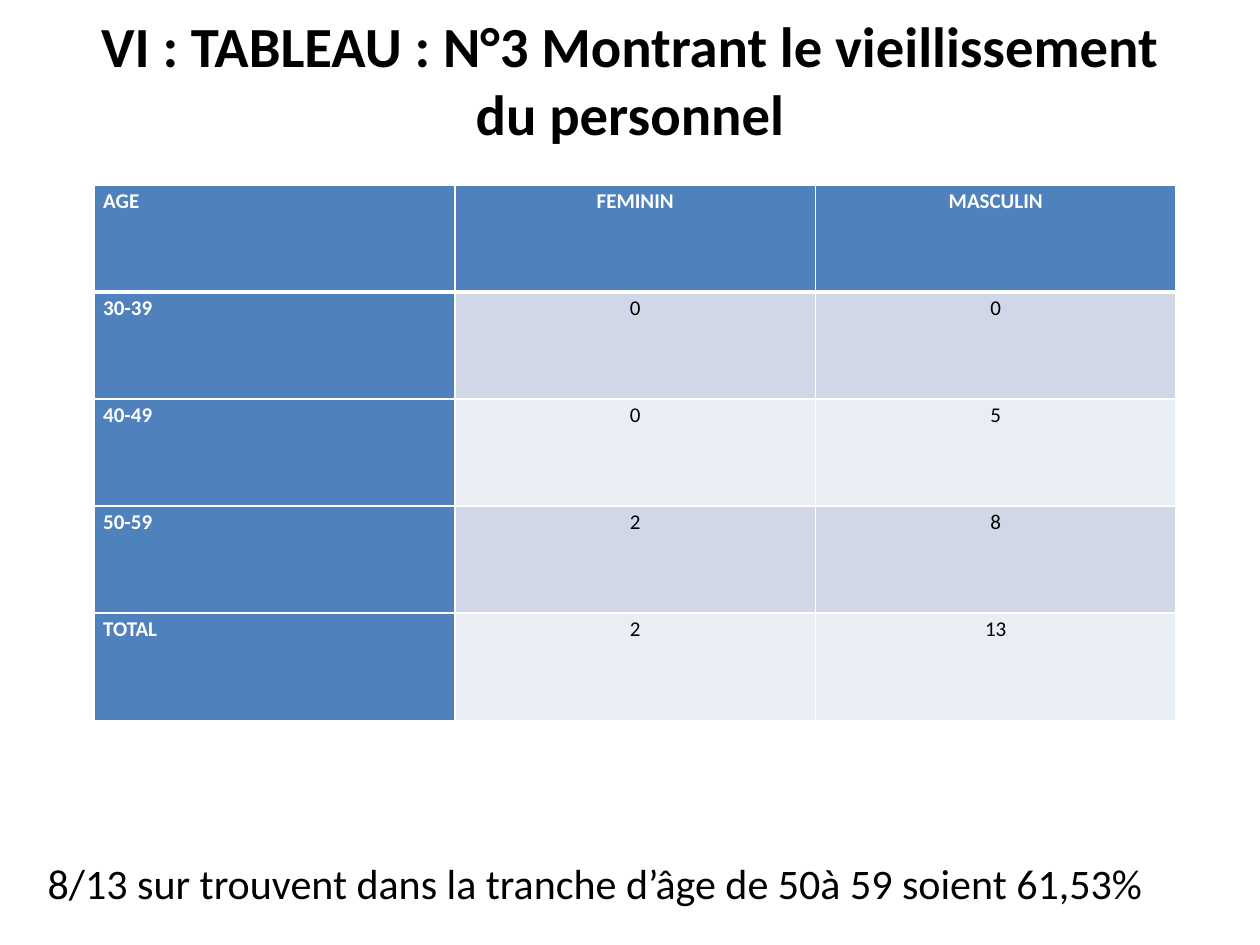
from lxml import etree
from pptx import Presentation
from pptx.dml.color import RGBColor
from pptx.enum import text
from pptx.oxml.ns import qn
from pptx.util import Pt

COLORS = {"text": "000000", "white": "FFFFFF", "head": "4F81BD",
          "odd": "D0D8E8", "even": "E9EDF4"}
FONT = "Calibri"
CENTER = text.PP_ALIGN.CENTER
LEFT = text.PP_ALIGN.LEFT

ROWS = [
    ("AGE", "FEMININ", "MASCULIN"),
    ("30-39", "0", "0"),
    ("40-49", "0", "5"),
    ("50-59", "2", "8"),
    ("TOTAL", "2", "13"),
]


class SlideBuilder:
    def __init__(self, prs):
        self.s = prs.slides.add_slide(prs.slide_layouts[1])

    def add_run(self, p, words, size, color="text", bold=False):
        r = p.add_run()
        r.text = words
        r.font.name = FONT
        r.font.size = Pt(size)
        r.font.bold = bold
        r.font.color.rgb = RGBColor.from_string(COLORS[color])

    def placeholder(self, idx, box, words, size, align, anchor, bottom, bold=False):
        """Place and fill a placeholder; bottom is its lower inset."""
        sp = self.s.placeholders[idx]
        sp.left, sp.top, sp.width, sp.height = map(Pt, box)
        tf = sp.text_frame
        tf.word_wrap = True
        tf.auto_size = text.MSO_AUTO_SIZE.NONE
        tf.vertical_anchor = anchor
        tf.margin_bottom = Pt(bottom)
        p = tf.paragraphs[0]
        p.alignment = align
        self.add_run(p, words, size, bold=bold)
        return p

    def remove_bullet(self, p):
        pPr = p._p.get_or_add_pPr()
        pPr.set("marL", "0")
        pPr.set("indent", "0")
        etree.SubElement(pPr, qn("a:buNone"))

    def border(self, cell, side, width):
        tcPr = cell._tc.get_or_add_tcPr()
        ln = etree.Element(qn(f"a:ln{side}"), w=str(Pt(width)))
        fill = etree.SubElement(ln, qn("a:solidFill"))
        etree.SubElement(fill, qn("a:srgbClr"), val=COLORS["white"])
        # Borders come before the cell fill, in the order L, R, T, B
        tcPr.insert("LRTB".index(side), ln)

    def table(self, left, top, col_width, row_height, rows):
        n_rows, n_cols = len(rows), len(rows[0])
        tbl = self.s.shapes.add_table(
            n_rows, n_cols, Pt(left), Pt(top),
            Pt(col_width * n_cols), Pt(row_height * n_rows)).table
        for col in tbl.columns:
            col.width = Pt(col_width)
        for i, values in enumerate(rows):
            tbl.rows[i].height = Pt(row_height)
            for j, value in enumerate(values):
                self.cell(tbl.cell(i, j), i, j, value)

    def cell(self, cell, i, j, value):
        header = i == 0 or j == 0
        fill = "head" if header else "odd" if i % 2 else "even"
        cell.fill.solid()
        cell.fill.fore_color.rgb = RGBColor.from_string(COLORS[fill])
        cell.margin_left = cell.margin_right = Pt(5)
        cell.margin_top = cell.margin_bottom = Pt(0)
        p = cell.text_frame.paragraphs[0]
        p.alignment = CENTER if j else LEFT
        p.line_spacing = 1.15
        self.add_run(p, value, 12, "white" if header else "text", header)
        for side in "LRTB":
            thick = (side == "B" and i == 0) or (side == "T" and i == 1)
            self.border(cell, side, 3 if thick else 1)


def main():
    prs = Presentation()
    prs.slide_width, prs.slide_height = Pt(720), Pt(540)
    slide = SlideBuilder(prs)
    slide.placeholder(0, (36, 21.6, 648, 90),
                      "VI : TABLEAU : N°3 Montrant le vieillissement du personnel",
                      32.4, CENTER, text.MSO_ANCHOR.MIDDLE, 47, bold=True)
    conclusion = slide.placeholder(
        1, (20, 83, 680.4, 436),
        "8/13 sur trouvent dans la tranche d’âge de 50à 59 soient 61,53%",
        24, LEFT, text.MSO_ANCHOR.BOTTOM, 0)
    slide.remove_bullet(conclusion)
    slide.table(54, 105.6, 206, 61.2, ROWS)
    prs.save("out.pptx")


if __name__ == "__main__":
    main()
